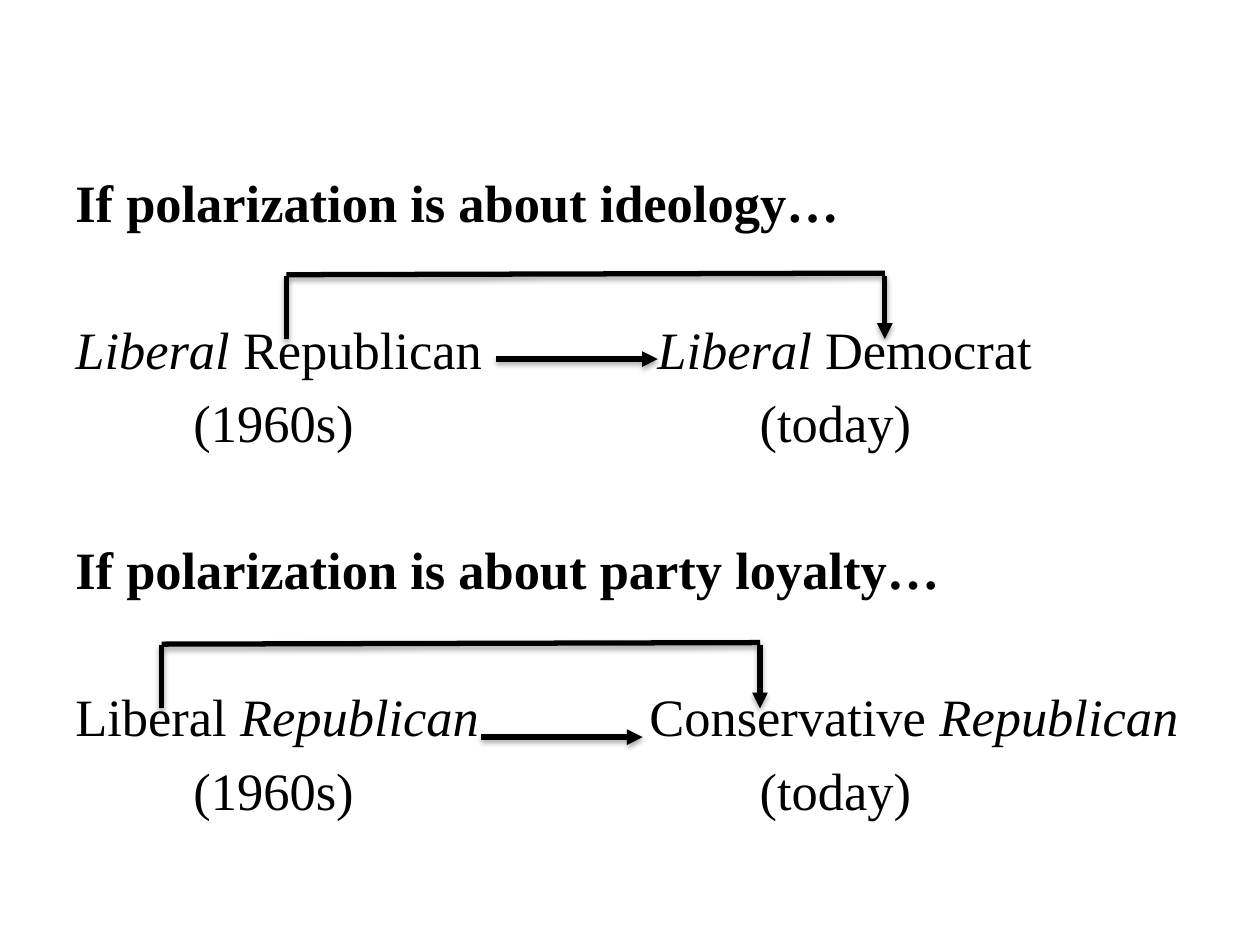
from lxml import etree
from pptx import Presentation
from pptx.dml.color import RGBColor
from pptx.enum import shapes, text
from pptx.oxml import parse_xml
from pptx.oxml.ns import qn, nsdecls
from pptx.util import Pt

BLACK = RGBColor(0, 0, 0)
FONT = "Times New Roman"
FONT_SIZE = 30
LINE_GAP = 6
BLANK_LINE = 42
DATES = [("\t(1960s)\t(today)", "")]
DATE_TABS = (67.4, 391)

# Each line: runs as (text, style), tab stops in points, gap above
LINES = [
    ([("If polarization is about ideology…", "bold")], (), 0),
    ([("Liberal", "italic"), (" Republican\t", ""), ("Liberal", "italic"),
      (" Democrat", "")], (332.6,), LINE_GAP + BLANK_LINE),
    (DATES, DATE_TABS, LINE_GAP),
    ([("If polarization is about party loyalty…", "bold")], (), LINE_GAP + BLANK_LINE),
    ([("Liberal ", ""), ("Republican", "italic"), ("\tConservative ", ""),
      ("Republican", "italic")], (328,), LINE_GAP + BLANK_LINE),
    (DATES, DATE_TABS, LINE_GAP),
]

SHADOW = (
    f'<a:effectLst {nsdecls("a")}><a:outerShdw blurRad="{Pt(3.1)}" dist="{Pt(1.8)}" '
    'dir="5400000" rotWithShape="0"><a:srgbClr val="000000"><a:alpha val="35000"/>'
    '</a:srgbClr></a:outerShdw></a:effectLst>'
)


def set_tabs(paragraph, positions):
    """Set left tab stops, measured from the text edge."""
    if positions:
        tabs = etree.SubElement(paragraph._p.get_or_add_pPr(), qn("a:tabLst"))
        for position in positions:
            etree.SubElement(tabs, qn("a:tab"), pos=str(int(Pt(position))), algn="l")


def add_body(slide, left, top, width, height):
    """Write both cases in one text box."""
    box = slide.shapes.add_textbox(Pt(left), Pt(top), Pt(width), Pt(height))
    frame = box.text_frame
    frame.word_wrap = True
    frame.vertical_anchor = text.MSO_ANCHOR.TOP
    for index, (runs, tabs, gap) in enumerate(LINES):
        paragraph = frame.add_paragraph() if index else frame.paragraphs[0]
        paragraph.space_before = Pt(gap)
        set_tabs(paragraph, tabs)
        for words, style in runs:
            run = paragraph.add_run()
            run.text = words
            run.font.name = FONT
            run.font.size = Pt(FONT_SIZE)
            run.font.color.rgb = BLACK
            run.font.bold = style == "bold"
            run.font.italic = style == "italic"


def add_line(slide, start, end, arrow=False):
    connector = slide.shapes.add_connector(
        shapes.MSO_CONNECTOR.STRAIGHT, *map(Pt, start + end))
    connector.line.color.rgb = BLACK
    connector.line.width = Pt(3)
    if arrow:
        etree.SubElement(connector.line._get_or_add_ln(), qn("a:tailEnd"), type="triangle")
    connector._element.spPr.append(parse_xml(SHADOW))


def add_bracket(slide, left, top, width, height):
    """Draw the bracket that leads from the first term down to the second."""
    right, bottom = left + width, top + height
    add_line(slide, (right, top + 1), (right, bottom), arrow=True)
    add_line(slide, (left, top + 0.3), (right, top - 0.6))
    add_line(slide, (left, top + 1), (left, bottom))


def main():
    presentation = Presentation()
    presentation.slide_width, presentation.slide_height = Pt(720), Pt(540)
    slide = presentation.slides.add_slide(presentation.slide_layouts[6])

    # Text
    add_body(slide, 36, 93.6, 648, 409.7)

    # Brackets above the terms
    for left, top in ((163.6, 156.7), (92.3, 367.8)):
        add_bracket(slide, left, top, 342, 37)

    # Arrows between the terms
    for left, top in ((283.7, 205.2), (275, 421.2)):
        add_line(slide, (left, top), (left + 92.2, top), arrow=True)

    presentation.save("out.pptx")


if __name__ == "__main__":
    main()
